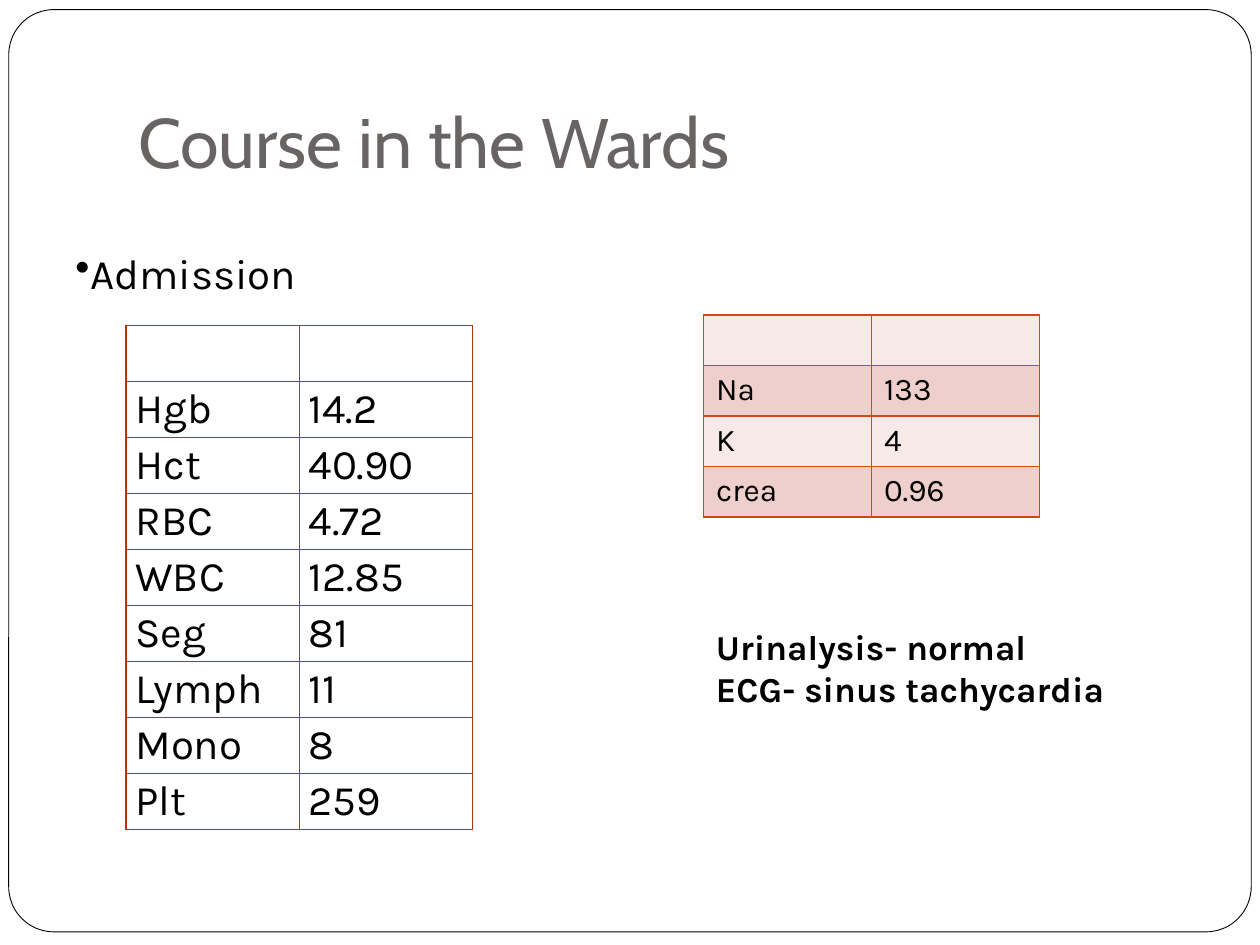
from lxml import etree
from pptx import Presentation
from pptx import util as u
from pptx.dml.color import RGBColor
from pptx.enum import shapes, text
from pptx.oxml import ns

Pt = u.Pt
MID, TOP, LOW = (text.MSO_ANCHOR.MIDDLE, text.MSO_ANCHOR.TOP,
                 text.MSO_ANCHOR.BOTTOM)


def color(code):
    return RGBColor.from_string(code)


def sub(node, tag, **attrs):
    return etree.SubElement(node, ns.qn(tag), **attrs)


class Deck:
    head, body, ink = "Cabin", "Karla", "000000"

    def __init__(self, wide, high):
        self.prs = Presentation()
        self.prs.slide_width, self.prs.slide_height = Pt(wide), Pt(high)
        self.slide = self.prs.slides.add_slide(self.prs.slide_layouts[6])

    def style(self, para, size, face=None, tint=None, bold=False):
        font = para.font
        font.size, font.bold = Pt(size), bold
        font.name = face or self.body
        font.color.rgb = color(tint or self.ink)

    def frame(self, x, y, w, h, adj):
        box = self.slide.shapes.add_shape(
            shapes.MSO_SHAPE.ROUNDED_RECTANGLE, Pt(x), Pt(y), Pt(w), Pt(h))
        box.adjustments[0] = adj
        box.shadow.inherit = False
        box.fill.solid()
        box.fill.fore_color.rgb = color("FFFFFF")
        box.line.color.rgb = color(self.ink)
        box.line.width = Pt(0.5)

    def label(self, x, y, w, h, lines, size, anchor=TOP, foot=3.6,
              bullet=None, **look):
        box = self.slide.shapes.add_textbox(Pt(x), Pt(y), Pt(w), Pt(h))
        tf = box.text_frame
        tf.word_wrap = True
        tf.vertical_anchor = anchor
        tf.margin_bottom = Pt(foot)
        tf.text = "\n".join(lines)
        for para in tf.paragraphs:
            if bullet:
                props = para._p.get_or_add_pPr()
                props.set("marL", "0")
                props.set("indent", "0")
                sub(props, "a:buChar", char=bullet)
            self.style(para, size, **look)

    def edges(self, cell, tint, width):
        props = cell._tc.get_or_add_tcPr()
        for i, side in enumerate(("a:lnL", "a:lnR", "a:lnT", "a:lnB")):
            line = etree.Element(ns.qn(side), w=str(int(Pt(width))))
            sub(sub(line, "a:solidFill"), "a:srgbClr", val=tint)
            props.insert(i, line)

    def table(self, x, y, col, row, data, size, edge, width, fills=(),
              anchor=TOP, side=7.2, pad=3.6):
        grid = self.slide.shapes.add_table(
            len(data), 2, Pt(x), Pt(y), Pt(2 * col), Pt(row * len(data))).table
        for item in grid.columns:
            item.width = Pt(col)
        for r, pair in enumerate(data):
            grid.rows[r].height = Pt(row)
            for c, word in enumerate(pair):
                cell = grid.cell(r, c)
                cell.text = word
                cell.vertical_anchor = anchor
                cell.margin_left = cell.margin_right = Pt(side)
                cell.margin_top = cell.margin_bottom = Pt(pad)
                self.style(cell.text_frame.paragraphs[0], size)
                if fills:
                    cell.fill.solid()
                    cell.fill.fore_color.rgb = color(fills[r % len(fills)])
                else:
                    cell.fill.background()
                self.edges(cell, edge, width)


def main():
    deck = Deck(720, 540)

    # Frame and title
    deck.frame(5, 5.5, 710, 527, 0.049)
    deck.label(72, 21.6, 612, 90, ["Course in the Wards"], 40, anchor=LOW,
               foot=7.2, face=deck.head, tint="696464")

    # Blood count
    blood = [("", ""), ("Hgb", "14.2"), ("Hct", "40.90"), ("RBC", "4.72"),
             ("WBC", "12.85"), ("Seg", "81"), ("Lymph", "11"),
             ("Mono", "8"), ("Plt", "259")]
    deck.table(72, 186, 99, 32, blood, 24, "B1360B", 0.75,
               anchor=MID, side=5.4, pad=0)
    deck.label(36, 138, 402, 58, ["Admission"], 24, bullet="•")

    # Chemistry
    chem = [("", ""), ("Na", "133"), ("K", "4"), ("crea", "0.96")]
    deck.table(402, 180, 96, 28.8, chem, 18, "D34817", 1,
               fills=("F7E9E8", "EFCFCC"))

    # Other tests
    deck.label(402, 354, 258, 55.5,
               ["Urinalysis- normal", "ECG- sinus tachycardia"], 20, bold=True)

    deck.prs.save("out.pptx")


if __name__ == "__main__":
    main()
